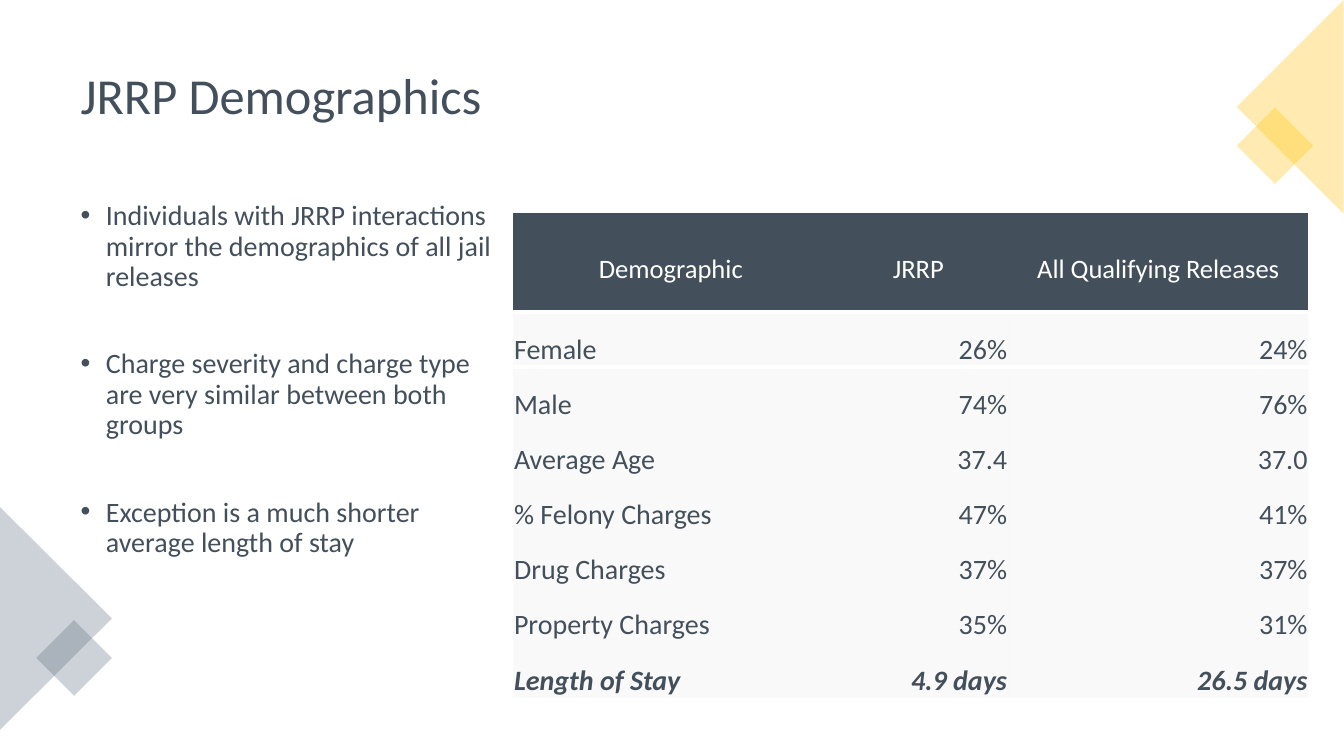
from dataclasses import dataclass

from lxml.etree import SubElement
from pptx import Presentation
from pptx.dml.color import RGBColor
from pptx.enum.shapes import MSO_SHAPE
from pptx.enum.text import MSO_ANCHOR, MSO_AUTO_SIZE, PP_ALIGN
from pptx.oxml.ns import qn
from pptx.util import Pt

FONT = "Calibri"
COLORS = {"slate": "434F5B", "steel": "5C6D7E", "gold": "FFC000",
          "pale": "F2F2F2", "white": "FFFFFF"}
NO_STYLE = "{2D5ABB26-0587-4C30-8999-92F81FD0307C}"
BULLETS = [
    "Individuals with JRRP interactions mirror the demographics of all jail releases",
    "Charge severity and charge type are very similar between both groups",
    "Exception is a much shorter average length of stay",
]
COL_WIDTHS = [225.4, 128.2, 214.6]
HEADER_HEIGHT, ROW_HEIGHT = 70.5, 39.35
ROWS = [
    ("Demographic", "JRRP", "All Qualifying Releases"),
    ("Female", "26%", "24%"),
    ("Male", "74%", "76%"),
    ("Average Age", "37.4", "37.0"),
    ("% Felony Charges", "47%", "41%"),
    ("Drug Charges", "37%", "37%"),
    ("Property Charges", "35%", "31%"),
    ("Length of Stay", "4.9 days", "26.5 days"),
]


@dataclass
class Ornament:
    """A translucent corner shape, placed by its unrotated box."""
    kind: MSO_SHAPE
    left: float
    top: float
    width: float
    height: float
    rotation: int
    color: str


CORNERS = [
    [Ornament(MSO_SHAPE.ISOSCELES_TRIANGLE, -39.6, 401.8, 159.1, 79.9, 90, "steel"),
     Ornament(MSO_SHAPE.RECTANGLE, 33.8, 450.9, 38.2, 38.2, 45, "steel")],
    [Ornament(MSO_SHAPE.RECTANGLE, 891.4, 84.7, 38.7, 38.7, 45, "gold"),
     Ornament(MSO_SHAPE.ISOSCELES_TRIANGLE, 845.3, 38.2, 152.6, 76.3, 270, "gold")],
]


def rgb(name: str) -> RGBColor:
    """Look up a named colour."""
    return RGBColor.from_string(COLORS[name])


def fill_solid(fill, props, color: str, opacity: int = 100) -> None:
    """Fill with a colour at an opacity given in percent."""
    fill.solid()
    fill.fore_color.rgb = rgb(color)
    if opacity < 100:
        clr = props.find(qn("a:solidFill"))[0]
        SubElement(clr, qn("a:alpha"), val=str(opacity * 1000))


def format_runs(p, size: float, color: str, strong: bool = False) -> None:
    """Set the font of every run in a paragraph."""
    for r in p.runs:
        r.font.name, r.font.size = FONT, Pt(size)
        r.font.color.rgb = rgb(color)
        r.font.bold = r.font.italic = strong


def place(sp, left: float, top: float, width: float, height: float) -> None:
    """Move and size a placeholder."""
    sp.left, sp.top, sp.width, sp.height = map(Pt, (left, top, width, height))
    sp.text_frame.word_wrap = True
    sp.text_frame.auto_size = MSO_AUTO_SIZE.NONE


def draw_title(sp) -> None:
    """Fill the title placeholder."""
    place(sp, 50.4, 25.2, 859, 89.3)
    tf = sp.text_frame
    tf.text = "JRRP Demographics"
    tf.vertical_anchor = MSO_ANCHOR.MIDDLE
    p = tf.paragraphs[0]
    p.alignment, p.line_spacing = PP_ALIGN.LEFT, 0.9
    format_runs(p, 36, "slate")


def draw_bullets(sp) -> None:
    """Fill the body placeholder with the bulleted list."""
    place(sp, 50.4, 140.4, 315.4, 346.3)
    tf = sp.text_frame
    tf.text = "\n".join(BULLETS)
    for i, p in enumerate(tf.paragraphs):
        p.line_spacing, p.space_before = 0.9, Pt(41 if i else 10)
        pPr = p._p.get_or_add_pPr()
        pPr.set("marL", str(Pt(18)))
        pPr.set("indent", str(-Pt(18)))
        SubElement(pPr, qn("a:buFont"), typeface="Arial")
        SubElement(pPr, qn("a:buChar"), char="•")
        format_runs(p, 20, "slate")


def draw_corner(s, ornaments: list[Ornament]) -> None:
    """Draw one group of corner shapes."""
    group = s.shapes.add_group_shape()
    for o in ornaments:
        sp = group.shapes.add_shape(o.kind, Pt(o.left), Pt(o.top), Pt(o.width), Pt(o.height))
        sp.rotation = o.rotation
        sp.shadow.inherit = False
        sp.line.fill.background()
        fill_solid(sp.fill, sp._element.spPr, o.color, 30)


def draw_cell(cell, text: str, row: int, col: int) -> None:
    """Format one table cell by its row and column."""
    header = row == 0
    cell.margin_left = cell.margin_right = Pt(0.7)
    cell.margin_top, cell.margin_bottom = Pt(9.4), Pt(0)
    cell.vertical_anchor = MSO_ANCHOR.MIDDLE if header else MSO_ANCHOR.BOTTOM
    tcPr = cell._tc.get_or_add_tcPr()
    if row < 2:
        edge = SubElement(tcPr, qn("a:lnB" if header else "a:lnT"), w=str(Pt(3)))
        SubElement(SubElement(edge, qn("a:solidFill")), qn("a:srgbClr"), val=COLORS["white"])
    fill_solid(cell.fill, tcPr, "slate" if header else "pale", 100 if header else 45)
    cell.text_frame.text = text
    p = cell.text_frame.paragraphs[0]
    if header:
        p.alignment = PP_ALIGN.CENTER
    else:
        p.alignment = PP_ALIGN.RIGHT if col else PP_ALIGN.LEFT
    format_runs(p, 19 if header else 20, "white" if header else "slate",
                strong=row == len(ROWS) - 1)


def draw_table(s) -> None:
    """Draw the demographics table."""
    heights = [HEADER_HEIGHT] + [ROW_HEIGHT] * (len(ROWS) - 1)
    frame = s.shapes.add_table(len(ROWS), len(COL_WIDTHS), Pt(366.5), Pt(152.4),
                               Pt(sum(COL_WIDTHS)), Pt(sum(heights)))
    table = frame.table
    table.horz_banding = False
    table._tbl.tblPr.find(qn("a:tableStyleId")).text = NO_STYLE
    for column, width in zip(table.columns, COL_WIDTHS):
        column.width = Pt(width)
    for i, (height, texts) in enumerate(zip(heights, ROWS)):
        table.rows[i].height = Pt(height)
        for j, text in enumerate(texts):
            draw_cell(table.cell(i, j), text, i, j)


def main() -> None:
    """Build and save the slide."""
    prs = Presentation()
    prs.slide_width, prs.slide_height = Pt(960), Pt(540)
    s = prs.slides.add_slide(prs.slide_layouts[1])
    draw_title(s.shapes.title)
    draw_bullets(s.placeholders[1])
    for ornaments in CORNERS:
        draw_corner(s, ornaments)
    draw_table(s)
    prs.save("out.pptx")


if __name__ == "__main__":
    main()
